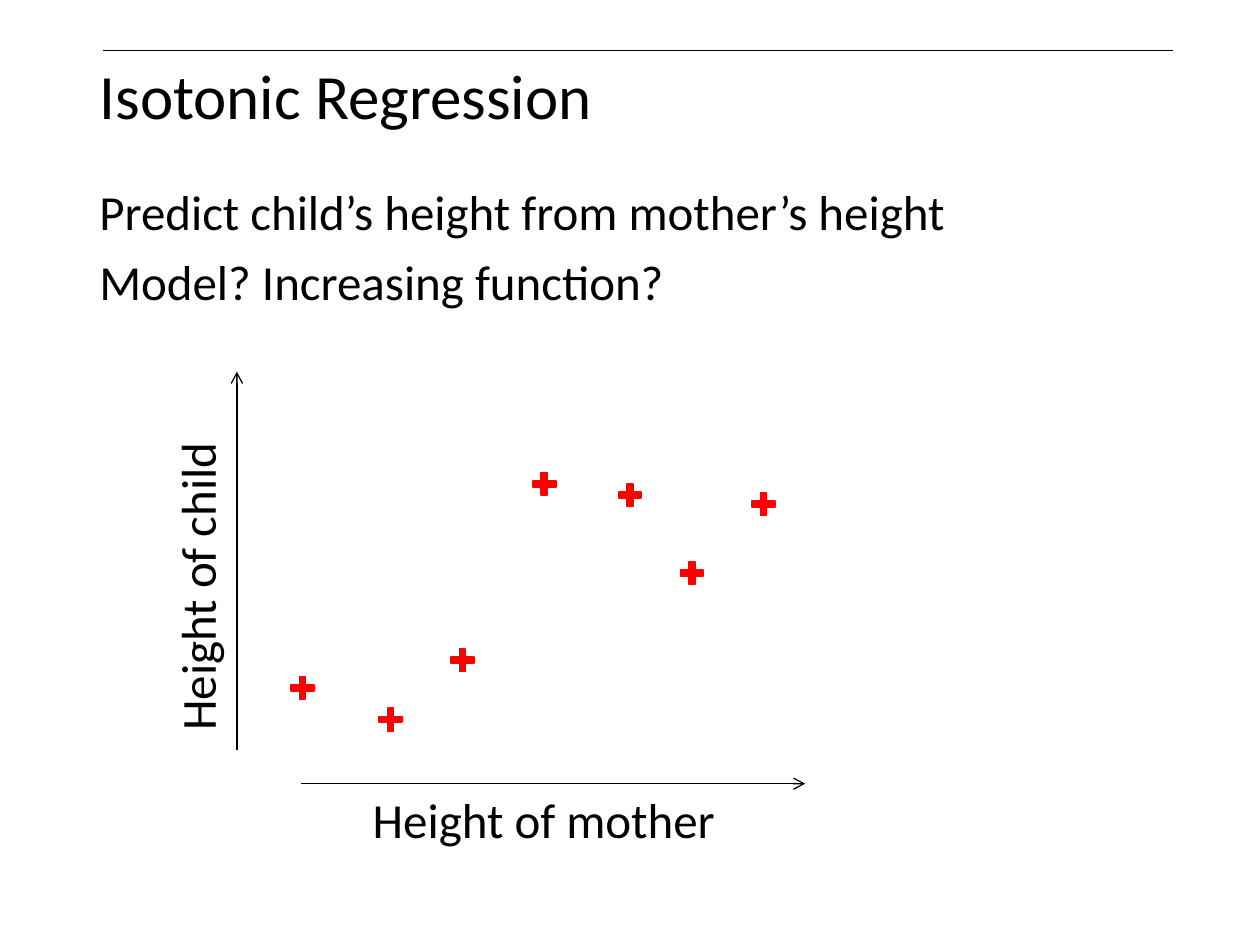
from dataclasses import dataclass
from typing import Any

from lxml.etree import SubElement
from pptx import Presentation
from pptx.dml.color import RGBColor as RGB
from pptx.enum.shapes import MSO_CONNECTOR as CONN, MSO_SHAPE as SHAPE
from pptx.enum.text import MSO_ANCHOR as ANCHOR, MSO_AUTO_SIZE as FIT, PP_ALIGN as ALIGN
from pptx.oxml.ns import qn
from pptx.util import Inches, Pt

COLORS = {"ink": "000000", "point": "FF0000"}
POINTS = [(23.1, 53.7), (30.1, 56.2), (35.8, 51.5), (42.3, 37.5),
          (49.1, 38.4), (54, 44.6), (59.7, 39.1)]


@dataclass
class Sketch:
    """Draws styled elements on a slide laid out as 100 columns by 75 rows."""
    prs: Any
    s: Any
    font: str = "Calibri"
    body_size: int = 28

    def grid(self, *cells):
        cols, rows = self.prs.slide_width / 100, self.prs.slide_height / 75
        return [round(c * (rows if i % 2 else cols)) for i, c in enumerate(cells)]

    def fill_text(self, tf, lines, size, align, anchor=ANCHOR.TOP, spacing=None, before=0):
        tf.word_wrap, tf.auto_size, tf.vertical_anchor = True, FIT.NONE, anchor
        for i, line in enumerate(lines):
            p = tf.add_paragraph() if i else tf.paragraphs[0]
            p.alignment, p.line_spacing, p.space_before = align, spacing, Pt(before)
            r = p.add_run()
            r.text = line
            r.font.name, r.font.size = self.font, Pt(size)
            r.font.color.rgb = RGB.from_string(COLORS["ink"])

    def title(self, text, box):
        sp = self.s.shapes.title
        sp.left, sp.top, sp.width, sp.height = self.grid(*box)
        self.fill_text(sp.text_frame, [text], 36, ALIGN.LEFT, ANCHOR.MIDDLE, 0.9)

    def text(self, lines, box, align=ALIGN.CENTER, rotation=0, **spacing):
        sp = self.s.shapes.add_textbox(*self.grid(*box))
        sp.rotation = rotation
        self.fill_text(sp.text_frame, lines, self.body_size, align, **spacing)

    def line(self, start, end, width, arrow=False):
        cx = self.s.shapes.add_connector(CONN.STRAIGHT, *self.grid(*start, *end))
        cx.line.color.rgb = RGB.from_string(COLORS["ink"])
        cx.line.width = Pt(width)
        if arrow:
            SubElement(cx._element.spPr.find(qn("a:ln")), qn("a:tailEnd"), type="arrow")
        SubElement(cx._element.spPr, qn("a:effectLst"))

    def plus(self, left, top, size=1.8):
        sp = self.s.shapes.add_shape(SHAPE.CROSS, *self.grid(left, top, size, size))
        sp.adjustments[0] = 0.37
        sp.shadow.inherit = False
        sp.fill.solid()
        sp.fill.fore_color.rgb = sp.line.color.rgb = RGB.from_string(COLORS["point"])
        sp.line.width = Pt(1)


def main():
    prs = Presentation()
    prs.slide_width, prs.slide_height = Inches(10), Inches(7.5)
    sketch = Sketch(prs, prs.slides.add_slide(prs.slide_layouts[5]))
    sketch.line((8.2, 4), (93.1, 4), 1)
    sketch.title("Isotonic Regression", (6.9, 0.6, 86.2, 14.5))
    sketch.text(["Predict child’s height from mother’s height", "Model? Increasing function?"],
                (6.9, 14.4, 86.2, 59.1), ALIGN.LEFT, spacing=0.9, before=10)
    sketch.line((23.9, 62.2), (63.9, 62.2), 0.75, arrow=True)
    sketch.text(["Height of mother"], (18.6, 62.2, 49.1, 5.7))
    sketch.line((18.8, 59.5), (18.8, 29.5), 0.75, arrow=True)
    sketch.text(["Height of child"], (-2, 43.7, 35.2, 5.7), rotation=270)
    for left, top in POINTS:
        sketch.plus(left, top)
    prs.save("out.pptx")


if __name__ == "__main__":
    main()
